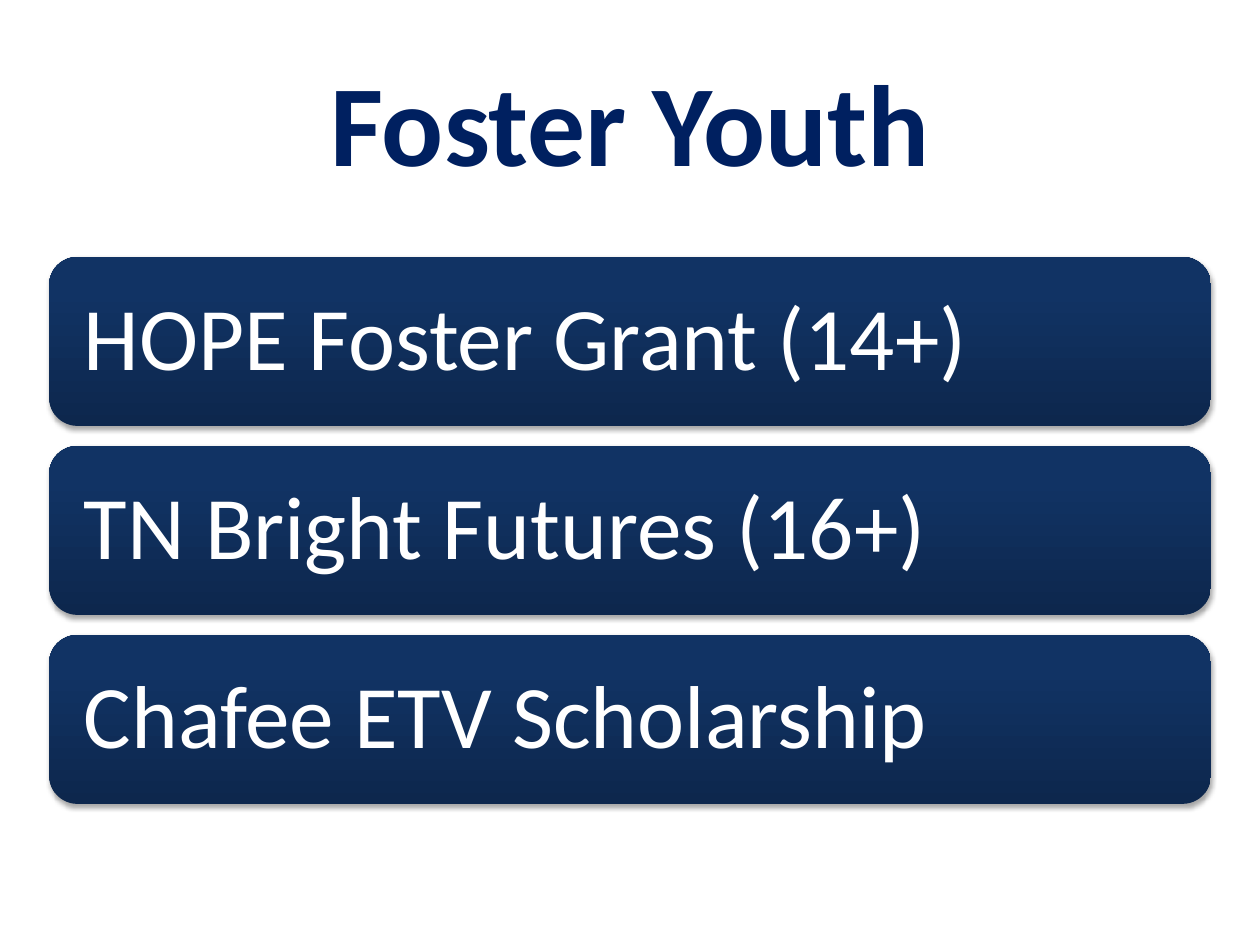
from lxml import etree
from pptx import Presentation
from pptx import util as u
from pptx.dml.color import RGBColor
from pptx.enum import shapes, text
from pptx.oxml import ns

WIDE, HIGH = 10, 7.5
LEFT, TOP = 0.39, 2.04
BAR, STEP = 1.34, 1.5
GRANTS = ["HOPE Foster Grant (14+)", "TN Bright Futures (16+)", "Chafee ETV Scholarship"]
STOPS = [(0, "0D274D"), (80, "113364"), (100, "0F3366")]


def color(code):
    return RGBColor.from_string(code)


def node(base, tag, **attrs):
    return etree.SubElement(base, ns.qn(tag), {key: str(val) for key, val in attrs.items()})


def write(frame, words, size, tint, bold=False, align=text.PP_ALIGN.LEFT, line=1.0, inset=0.1):
    frame.word_wrap = True
    frame.vertical_anchor = text.MSO_ANCHOR.MIDDLE
    frame.margin_left = frame.margin_right = u.Inches(inset)
    frame.margin_top = frame.margin_bottom = u.Inches(inset)
    para = frame.paragraphs[0]
    para.alignment = align
    para.line_spacing = line
    run = para.add_run()
    run.text = words
    run.font.name = "Calibri"
    run.font.size = u.Pt(size)
    run.font.bold = bold
    run.font.color.rgb = color(tint)


def shade(shape):
    shape.fill.gradient()
    shape.fill.gradient_angle = 90
    stops = shape.element.spPr.find(".//" + ns.qn("a:gsLst"))
    for stop in list(stops):
        stops.remove(stop)
    for pos, code in STOPS:
        stop = node(stops, "a:gs", pos=pos * 1000)
        node(stop, "a:srgbClr", val=code)


def shadow(shape):
    shape.shadow.inherit = False
    base = shape.element.spPr.find(ns.qn("a:effectLst"))
    drop = node(base, "a:outerShdw", blurRad=u.Pt(3.1), dist=u.Pt(1.8), dir=5400000, rotWithShape=0)
    tint = node(drop, "a:srgbClr", val="000000")
    node(tint, "a:alpha", val=35000)


def bar(slide, row, words):
    shape = slide.shapes.add_shape(
        shapes.MSO_SHAPE.ROUNDED_RECTANGLE,
        u.Inches(LEFT), u.Inches(TOP + row * STEP),
        u.Inches(WIDE - 2 * LEFT), u.Inches(BAR))
    shape.line.fill.background()
    shade(shape)
    shadow(shape)
    write(shape.text_frame, words, 51, "FFFFFF", line=0.9, inset=0.21)


def head(slide, words):
    title = slide.shapes.title
    title.left, title.top = u.Inches(0.5), u.Inches(0.33)
    title.width, title.height = u.Inches(WIDE - 1), u.Inches(1.25)
    write(title.text_frame, words, 66, "002060", bold=True, align=text.PP_ALIGN.CENTER, inset=0.05)


def main():
    deck = Presentation()
    deck.slide_width, deck.slide_height = u.Inches(WIDE), u.Inches(HIGH)
    slide = deck.slides.add_slide(deck.slide_layouts.get_by_name("Title Only"))
    head(slide, "Foster Youth")
    for row, words in enumerate(GRANTS):
        bar(slide, row, words)
    deck.save("out.pptx")


if __name__ == "__main__":
    main()
